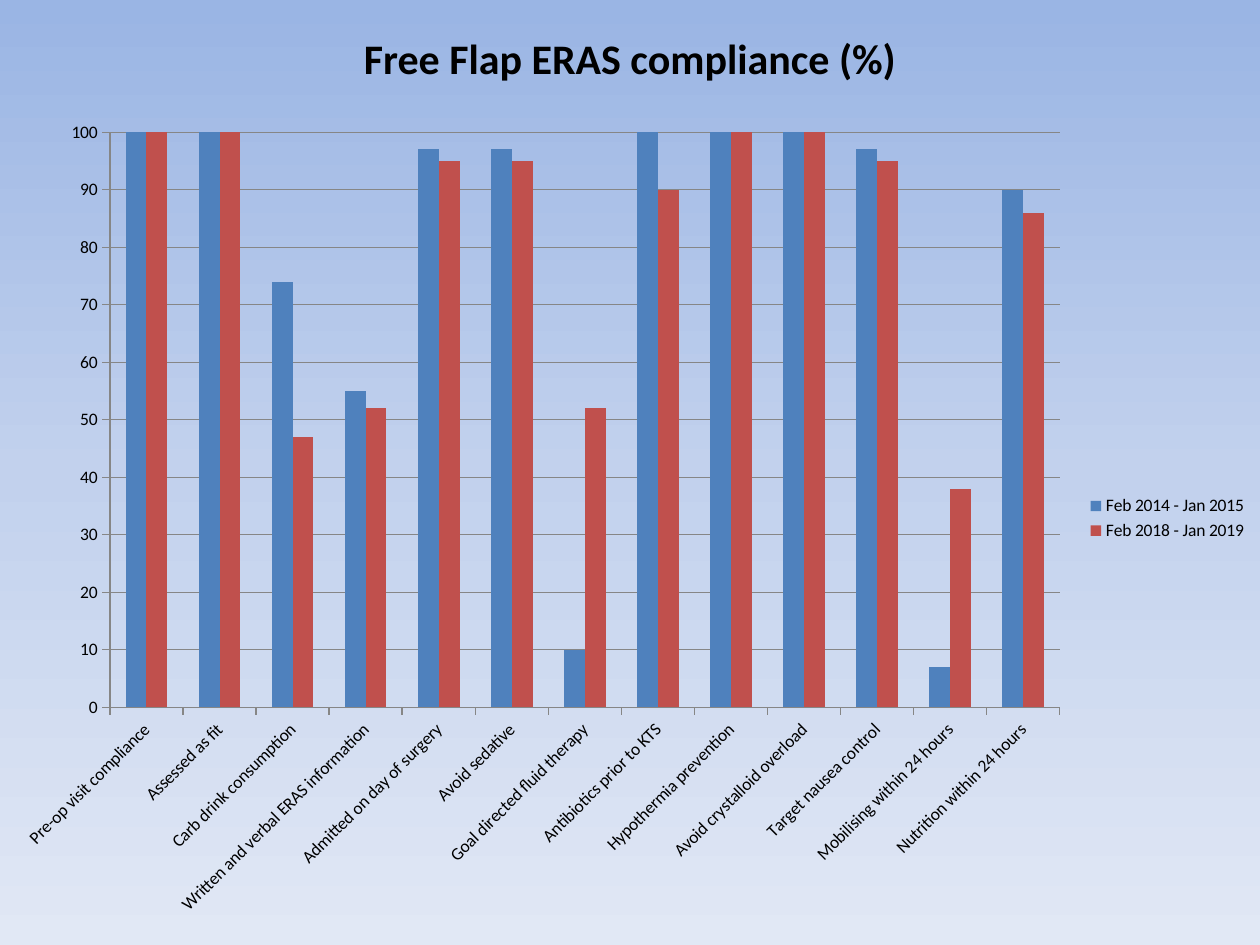
from copy import deepcopy
from dataclasses import dataclass

from pptx import Presentation
from pptx.chart.data import CategoryChartData
from pptx.dml.color import RGBColor as Rgb
from pptx.enum import chart as ch, text as tx
from pptx.util import Pt


@dataclass(frozen=True)
class Theme:
    font: str = "Calibri"
    ink: str = "000000"
    grid: str = "868686"
    sky: tuple = ((0, "9AB5E4"), (0.5, "C2D1ED"), (1, "E1E8F5"))
    title: int = 24
    label: int = 10


@dataclass(frozen=True)
class Box:
    left: float
    top: float
    width: float
    height: float

    def pts(self) -> tuple:
        return tuple(Pt(v) for v in (self.left, self.top, self.width, self.height))


@dataclass(frozen=True)
class Period:
    name: str
    color: str


@dataclass(frozen=True)
class Item:
    name: str
    rates: tuple


THEME = Theme()
PERIODS = (Period("Feb 2014 - Jan 2015", "4F81BD"), Period("Feb 2018 - Jan 2019", "C0504D"))
ITEMS = (
    Item("Pre-op visit compliance", (100, 100)),
    Item("Assessed as fit", (100, 100)),
    Item("Carb drink consumption", (74, 47)),
    Item("Written and verbal ERAS information", (55, 52)),
    Item("Admitted on day of surgery", (97, 95)),
    Item("Avoid sedative", (97, 95)),
    Item("Goal directed fluid therapy", (10, 52)),
    Item("Antibiotics prior to KTS", (100, 90)),
    Item("Hypothermia prevention", (100, 100)),
    Item("Avoid crystalloid overload", (100, 100)),
    Item("Target nausea control", (97, 95)),
    Item("Mobilising within 24 hours", (7, 38)),
    Item("Nutrition within 24 hours", (90, 86)),
)


def style(font, size: float, bold: bool = False) -> None:
    font.name, font.size, font.bold = THEME.font, Pt(size), bold
    font.color.rgb = Rgb.from_string(THEME.ink)


def write(slide, words: str, box: Box, *, size: float, bold: bool = False,
          align=tx.PP_ALIGN.LEFT) -> None:
    frame = slide.shapes.add_textbox(*box.pts()).text_frame
    frame.word_wrap = True
    frame.auto_size = tx.MSO_AUTO_SIZE.SHAPE_TO_FIT_TEXT
    para = frame.paragraphs[0]
    para.alignment = align
    run = para.add_run()
    run.text = words
    style(run.font, size, bold)


def shade(slide) -> None:
    """Fill the background with the theme's gradient, top to bottom."""
    fill = slide.background.fill
    fill.gradient()
    fill.gradient_angle = 270
    first = slide.background._cSld.xpath(".//a:gs")[0]
    first.addnext(deepcopy(first))
    for stop, (place, color) in zip(fill.gradient_stops, THEME.sky):
        stop.position = place
        stop.color.rgb = Rgb.from_string(color)


def rule(line) -> None:
    line.color.rgb = Rgb.from_string(THEME.grid)
    line.width = Pt(0.75)


def draw(slide, box: Box) -> None:
    """Add the clustered columns, one series for each period."""
    data = CategoryChartData(number_format="General")
    data.categories = [item.name for item in ITEMS]
    for i, period in enumerate(PERIODS):
        data.add_series(period.name, [item.rates[i] for item in ITEMS])
    kind = ch.XL_CHART_TYPE.COLUMN_CLUSTERED
    chart = slide.shapes.add_chart(kind, *box.pts(), data).chart
    style(chart.font, THEME.label)
    chart.has_title = False

    chart.has_legend = True
    chart.legend.position = ch.XL_LEGEND_POSITION.RIGHT
    chart.legend.include_in_layout = False

    plot = chart.plots[0]
    plot.gap_width, plot.overlap, plot.vary_by_categories = 150, 0, False
    for bars, period in zip(plot.series, PERIODS):
        bars.format.fill.solid()
        bars.format.fill.fore_color.rgb = Rgb.from_string(period.color)
        bars.invert_if_negative = False

    cats, vals = chart.category_axis, chart.value_axis
    for axis in (cats, vals):
        axis.major_tick_mark = ch.XL_TICK_MARK.OUTSIDE
        axis.minor_tick_mark = ch.XL_TICK_MARK.NONE
        rule(axis.format.line)
        style(axis.tick_labels.font, THEME.label)
    vals.maximum_scale = 100
    vals.has_major_gridlines = True
    rule(vals.major_gridlines.format.line)
    cats.has_major_gridlines = False
    slant = cats._element.xpath("c:txPr/a:bodyPr")[0]
    slant.set("rot", str(-45 * 60000))
    slant.set("vert", "horz")


def main() -> None:
    deck = Presentation()
    deck.slide_width, deck.slide_height = Pt(720), Pt(540)
    slide = deck.slides.add_slide(deck.slide_layouts[6])
    shade(slide)
    write(slide, "Free Flap ERAS compliance (%)", Box(156, 15, 408, 36),
          size=THEME.title, bold=True, align=tx.PP_ALIGN.CENTER)
    draw(slide, Box(0, 60.5, 720, 471.5))
    deck.save("out.pptx")


if __name__ == "__main__":
    main()
